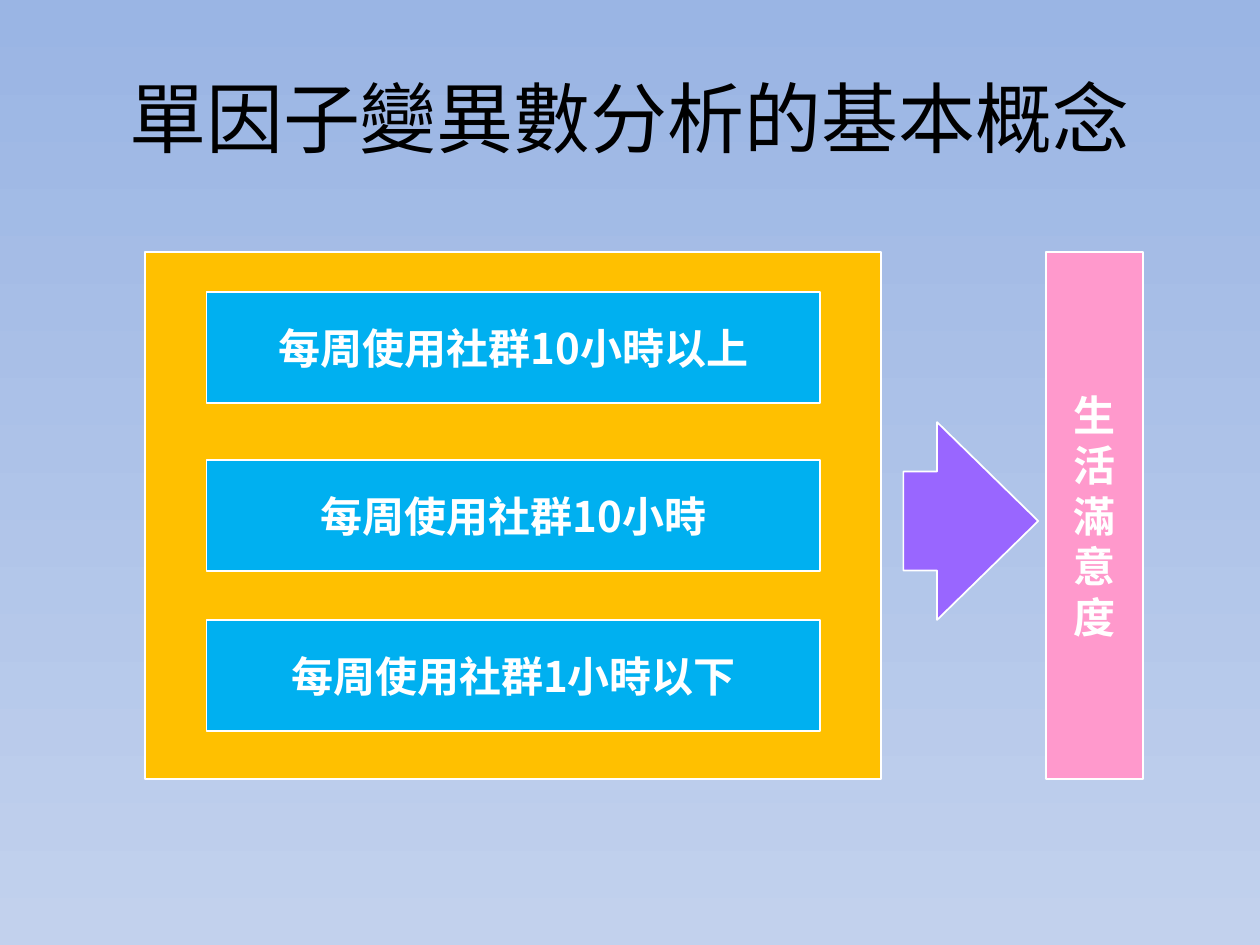
from dataclasses import dataclass

from lxml import etree
from pptx import Presentation
from pptx.dml.color import RGBColor
from pptx.enum.shapes import MSO_SHAPE
from pptx.enum.text import MSO_ANCHOR, PP_ALIGN
from pptx.oxml.ns import qn
from pptx.util import Inches, Pt

RECTANGLE = MSO_SHAPE.RECTANGLE
RIGHT_ARROW = MSO_SHAPE.RIGHT_ARROW
MIDDLE = MSO_ANCHOR.MIDDLE
CENTER = PP_ALIGN.CENTER

TITLE = "單因子變異數分析的基本概念"
GROUPS = ["每周使用社群10小時以上", "每周使用社群10小時", "每周使用社群1小時以下"]
OUTCOME = "生活滿意度"


@dataclass(frozen=True)
class Theme:
    font: str = "Noto Sans CJK SC"
    title_size: int = 44
    label_size: int = 24
    line_width: int = 1
    title: str = "000000"
    light: str = "FFFFFF"
    panel: str = "FFC000"
    group: str = "00B0F0"
    arrow: str = "9966FF"
    outcome: str = "FF99CC"
    background: tuple = ("9AB5E4", "C2D1ED")


THEME = Theme()
WIDTH, HEIGHT = Inches(10), Inches(7.5)

# Percent of the slide: (left, width) for columns, (top, height) for rows
TITLE_COLUMN, TITLE_ROW = (5, 90), (4, 16.67)
PANEL_COLUMN, BODY_ROW = (11.5, 58.4), (26.67, 55.73)
GROUP_COLUMN = (16.4, 48.7)
GROUP_TOPS, GROUP_HEIGHT = (30.93, 48.67, 65.6), 11.73
ARROW_COLUMN, ARROW_ROW = (71.7, 10.7), (44.67, 20.93)
OUTCOME_COLUMN = (83, 7.7)


def place(column, row):
    """Turn percent spans into left, top, width and height."""
    (left, width), (top, height) = column, row
    return [int(share * full / 100) for share, full in
            ((left, WIDTH), (top, HEIGHT), (width, WIDTH), (height, HEIGHT))]


def write(box, text, size, color, bold=False):
    frame = box.text_frame
    frame.word_wrap = True
    frame.vertical_anchor = MIDDLE
    para = frame.paragraphs[0]
    para.alignment = CENTER
    span = para.add_run()
    span.text = text
    span.font.size = Pt(size)
    span.font.bold = bold
    span.font.color.rgb = RGBColor.from_string(color)
    span.font.name = THEME.font
    east_asian = etree.SubElement(span.font._element, qn("a:ea"))
    east_asian.set("typeface", THEME.font)


def add_block(page, kind, column, row, color, label=None):
    block = page.shapes.add_shape(kind, *place(column, row))
    block.shadow.inherit = False
    block.fill.solid()
    block.fill.fore_color.rgb = RGBColor.from_string(color)
    block.line.color.rgb = RGBColor.from_string(THEME.light)
    block.line.width = Pt(THEME.line_width)
    if label:
        write(block, label, THEME.label_size, THEME.light, bold=True)
    return block


def paint_background(page):
    fill = page.background.fill
    fill.gradient()
    fill.gradient_angle = 270
    for stop, color in zip(fill.gradient_stops, THEME.background):
        stop.color.rgb = RGBColor.from_string(color)


def main():
    deck = Presentation()
    deck.slide_width, deck.slide_height = WIDTH, HEIGHT
    page = deck.slides.add_slide(deck.slide_layouts[6])
    paint_background(page)

    title = page.shapes.add_textbox(*place(TITLE_COLUMN, TITLE_ROW))
    write(title, TITLE, THEME.title_size, THEME.title)

    add_block(page, RECTANGLE, PANEL_COLUMN, BODY_ROW, THEME.panel)
    arrow = add_block(page, RIGHT_ARROW, ARROW_COLUMN, ARROW_ROW, THEME.arrow)
    arrow.adjustments[0], arrow.adjustments[1] = 0.5, 0.75
    add_block(page, RECTANGLE, OUTCOME_COLUMN, BODY_ROW, THEME.outcome, OUTCOME)
    for top, label in zip(GROUP_TOPS, GROUPS):
        add_block(page, RECTANGLE, GROUP_COLUMN, (top, GROUP_HEIGHT),
                  THEME.group, label)

    deck.save("out.pptx")


if __name__ == "__main__":
    main()
